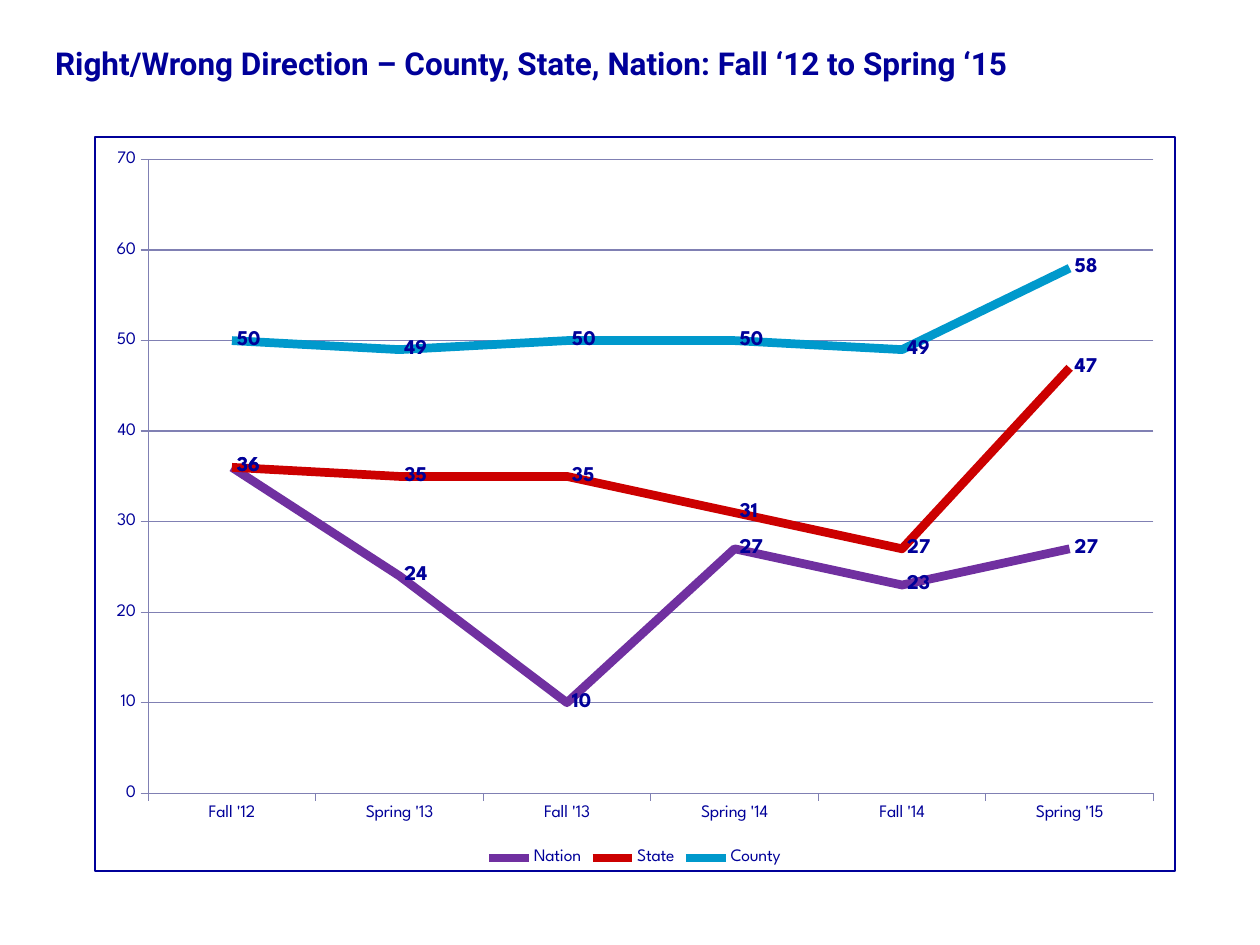
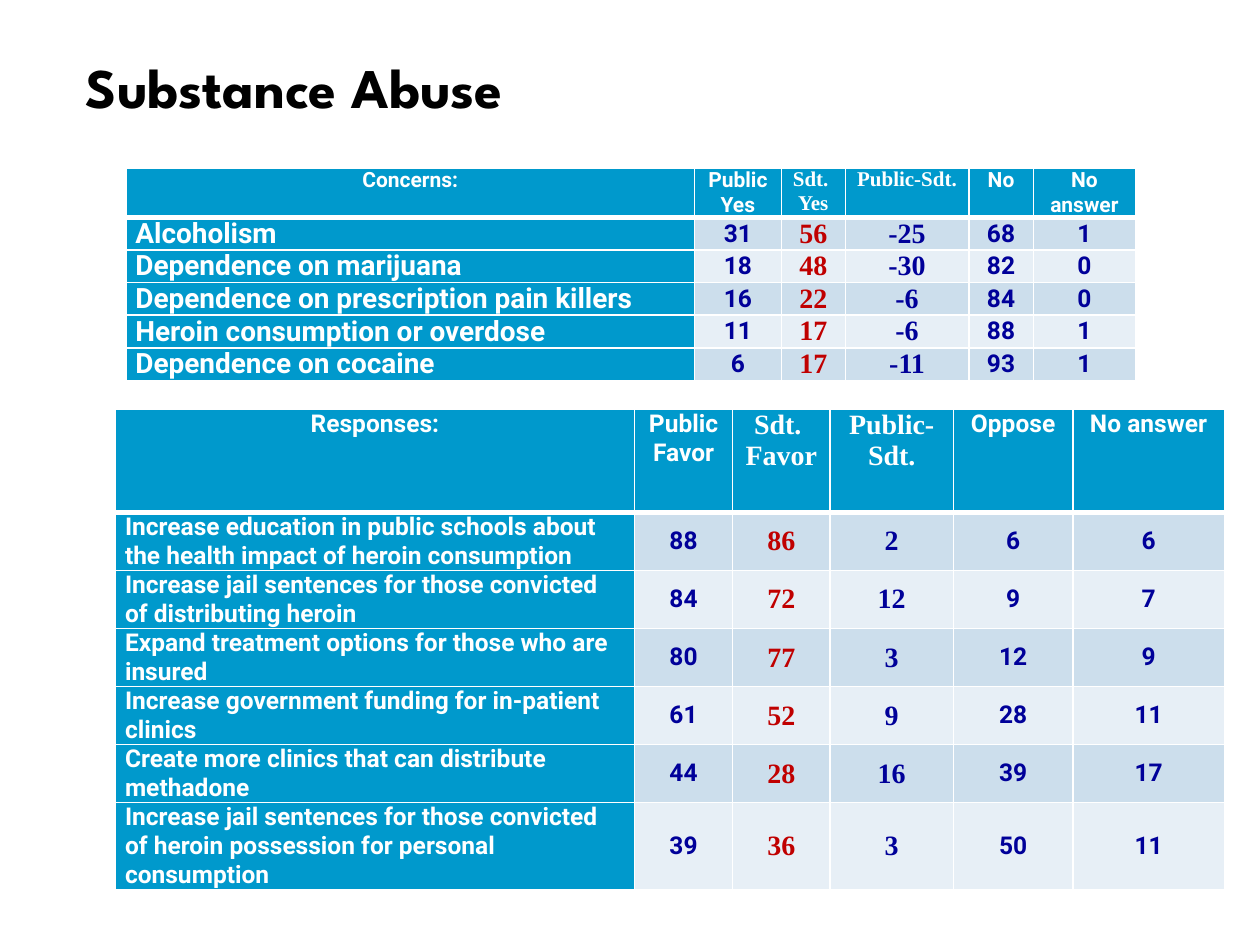
from lxml import etree
from pptx import Presentation
from pptx.chart.data import CategoryChartData
from pptx.dml.color import RGBColor
from pptx.enum.chart import XL_CHART_TYPE, XL_LABEL_POSITION, XL_LEGEND_POSITION
from pptx.enum.text import MSO_ANCHOR, MSO_AUTO_SIZE, PP_ALIGN
from pptx.oxml import parse_xml
from pptx.oxml.ns import nsdecls, qn
from pptx.util import Cm, Pt

# Shared colours and fonts
NAVY = RGBColor(0x00, 0x00, 0x99)
BLACK = RGBColor(0x00, 0x00, 0x00)
WHITE = RGBColor(0xFF, 0xFF, 0xFF)
BLUE = RGBColor(0x00, 0x99, 0xCC)
RED = RGBColor(0xCC, 0x00, 0x00)
DARK_RED = RGBColor(0xC0, 0x00, 0x00)
PURPLE = RGBColor(0x70, 0x30, 0xA0)
GRID = RGBColor(0x80, 0x80, 0xB3)
BANDS = [RGBColor(0xCC, 0xDE, 0xEC), RGBColor(0xE7, 0xEF, 0xF6)]
SPARTAN = "League Spartan"
ROBOTO = "Roboto"
TIMES = "Times New Roman"


def style_font(font, name, size, color, bold=True):
    font.name = name
    font.size = Pt(size)
    font.color.rgb = color
    font.bold = bold


def add_border(cell, side, width):
    line = etree.SubElement(cell._tc.get_or_add_tcPr(), qn(f"a:ln{side}"), w=str(Pt(width)))
    fill = etree.SubElement(line, qn("a:solidFill"))
    etree.SubElement(fill, qn("a:srgbClr"), val=str(WHITE))


deck = Presentation()
deck.slide_width, deck.slide_height = Cm(25.4), Cm(19.05)

# Both slides with their titles: text, place, left margin, anchor, font
title_rows = [
    ("Right/Wrong Direction – County, State, Nation: Fall ‘12 to Spring ‘15",
     (0.1, 0.76, 23.42, 1.02), 1.01, MSO_ANCHOR.MIDDLE, (ROBOTO, 18, NAVY)),
    ("Substance Abuse",
     (1.48, 1.07, 22.23, 1.47), 0.25, MSO_ANCHOR.BOTTOM, (SPARTAN, 32, BLACK)),
]
pages = []
for text, place, margin, anchor, font in title_rows:
    page = deck.slides.add_slide(deck.slide_layouts[5])
    title = page.shapes.title
    title.left, title.top, title.width, title.height = [Cm(length) for length in place]
    frame = title.text_frame
    frame.text = text
    frame.auto_size = MSO_AUTO_SIZE.NONE
    frame.margin_left = Cm(margin)
    frame.vertical_anchor = anchor
    para = frame.paragraphs[0]
    para.alignment = PP_ALIGN.LEFT
    style_font(para.runs[0].font, *font)
    pages.append(page)
direction_page, substance_page = pages

# Slide 1: line chart
direction_series = [
    ("Nation", (36, 24, 10, 27, 23, 27), PURPLE),
    ("State", (36, 35, 35, 31, 27, 47), RED),
    ("County", (50, 49, 50, 50, 49, 58), BLUE),
]
chart_data = CategoryChartData()
chart_data.categories = ["Fall '12", "Spring '13", "Fall '13",
                         "Spring '14", "Fall '14", "Spring '15"]
for name, values, color in direction_series:
    chart_data.add_series(name, values)
chart = direction_page.shapes.add_chart(
    XL_CHART_TYPE.LINE, Cm(1.9), Cm(2.75), Cm(21.8), Cm(14.82), chart_data).chart
chart.has_title = False
style_font(chart.font, SPARTAN, 10, NAVY, bold=False)
chart.has_legend = True
chart.legend.position = XL_LEGEND_POSITION.BOTTOM
chart.legend.include_in_layout = False

for axis in (chart.category_axis, chart.value_axis):
    axis.format.line.color.rgb = GRID
    axis.format.line.width = Pt(0.75)
chart.value_axis.maximum_scale = 70
chart.value_axis.minimum_scale = 0
chart.value_axis.major_unit = 10
chart.value_axis.has_major_gridlines = True
gridlines = chart.value_axis.major_gridlines.format.line
gridlines.color.rgb = GRID
gridlines.width = Pt(0.75)

# County ranks first in the series order, although Nation is drawn first
ranked_series = list(chart.plots[0].series)
for index, (series, (name, values, color)) in enumerate(zip(ranked_series, direction_series)):
    series._element.find(qn("c:order")).set("val", str(len(ranked_series) - 1 - index))
    series.smooth = False
    series.format.line.color.rgb = color
    series.format.line.width = Pt(5)
    labels = series.data_labels
    labels.show_value = True
    labels.position = XL_LABEL_POSITION.RIGHT
    style_font(labels.font, SPARTAN, 12, NAVY)

# Frame around the chart
chart._chartSpace.find(qn("c:chart")).addnext(parse_xml(
    f'<c:spPr {nsdecls("c", "a")}><a:noFill/><a:ln w="{Pt(0.75)}">'
    f'<a:solidFill><a:srgbClr val="{NAVY}"/></a:solidFill></a:ln></c:spPr>'))

# Slide 2: both tables
tables = [
    {"left": 2.54, "top": 3.39,
     "columns": [11.46, 1.75, 1.29, 2.49, 1.3, 2.06],
     "heights": [0.99] + [0.65] * 5,
     "header_size": 12, "header_times_size": 12, "label_size": 16,
     "rows": [
         ("Concerns:", "Public\vYes", "Sdt. \nYes", "Public-Sdt.", "No", "No answer"),
         ("Alcoholism", 31, 56, -25, 68, 1),
         ("Dependence on marijuana", 18, 48, -30, 82, 0),
         ("Dependence on prescription pain killers", 16, 22, -6, 84, 0),
         ("Heroin consumption or overdose", 11, 17, -6, 88, 1),
         ("Dependence on cocaine", 6, 17, -11, 93, 1),
     ]},
    {"left": 2.33, "top": 8.26,
     "columns": [10.46, 1.98, 1.96, 2.49, 2.41, 3.05],
     "heights": [2.07] + [1.17] * 5 + [1.75],
     "header_size": 14, "header_times_size": 16, "label_size": 14,
     "rows": [
         ("Responses:", "Public\vFavor", "Sdt. \nFavor", "Public-Sdt.", "Oppose", "No answer"),
         ("Increase education in public schools about the health impact of heroin consumption",
          88, 86, 2, 6, 6),
         ("Increase jail sentences for those convicted of distributing heroin",
          84, 72, 12, 9, 7),
         ("Expand treatment options for those who are insured", 80, 77, 3, 12, 9),
         ("Increase government funding for in-patient clinics", 61, 52, 9, 28, 11),
         ("Create more clinics that can distribute methadone", 44, 28, 16, 39, 17),
         ("Increase jail sentences for those convicted of heroin possession for personal "
          "consumption", 39, 36, 3, 50, 11),
     ]},
]
for layout in tables:
    rows, columns, heights = layout["rows"], layout["columns"], layout["heights"]
    table = substance_page.shapes.add_table(
        len(rows), len(columns), Cm(layout["left"]), Cm(layout["top"]),
        Cm(sum(columns)), Cm(sum(heights))).table
    for column, width in zip(table.columns, columns):
        column.width = Cm(width)
    for row, height in zip(table.rows, heights):
        row.height = Cm(height)

    for row_index, row_values in enumerate(rows):
        for column_index, value in enumerate(row_values):
            cell = table.cell(row_index, column_index)
            is_header, is_label = row_index == 0, column_index == 0
            is_times = column_index in (2, 3)
            cell.text_frame.text = str(value)
            cell.margin_left = cell.margin_right = Cm(0.19)
            cell.margin_top = cell.margin_bottom = 0

            # Borders come before the fill; the header is closed by a thick rule
            for side in "LRTB":
                is_rule = (side == "B" and is_header) or (side == "T" and row_index == 1)
                add_border(cell, side, 3 if is_rule else 1)
            cell.fill.solid()
            if is_header or is_label:
                cell.fill.fore_color.rgb = BLUE
                cell.vertical_anchor = MSO_ANCHOR.TOP
                color = WHITE
            else:
                cell.fill.fore_color.rgb = BANDS[(row_index - 1) % 2]
                cell.vertical_anchor = MSO_ANCHOR.MIDDLE
                color = DARK_RED if column_index == 2 else NAVY

            if is_header:
                size = layout["header_times_size" if is_times else "header_size"]
            elif is_label:
                size = layout["label_size"]
            else:
                size = 16 if is_times else 14
            for para in cell.text_frame.paragraphs:
                para.alignment = PP_ALIGN.LEFT if is_label and not is_header else PP_ALIGN.CENTER
                for span in para.runs:
                    style_font(span.font, TIMES if is_times else ROBOTO, size, color)

deck.save("out.pptx")
